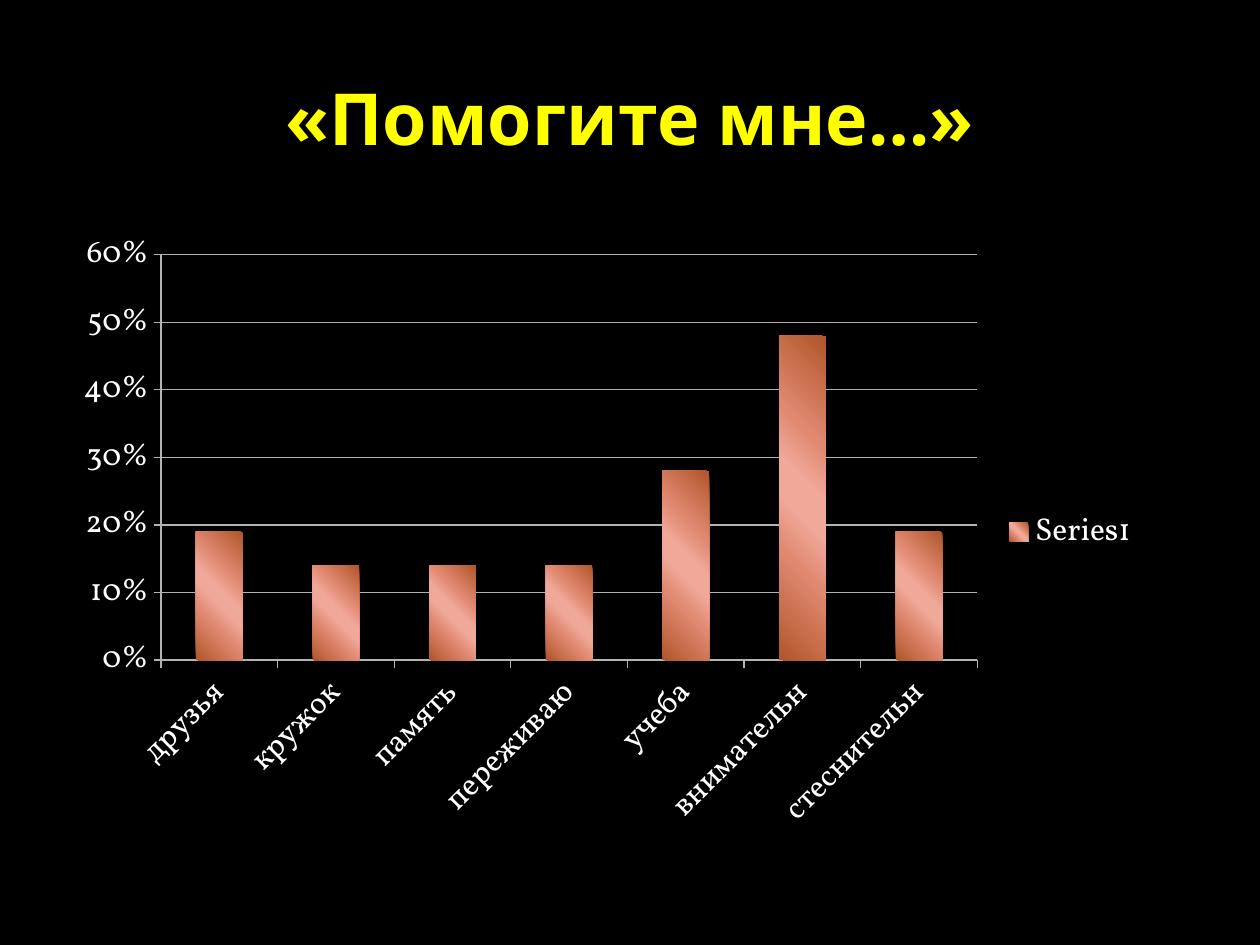
"""Build a slide with a column chart of what pupils ask for help with."""
from lxml.etree import SubElement
from pptx import Presentation
from pptx.chart.data import CategoryChartData
from pptx.dml.color import RGBColor
from pptx.enum.chart import XL_CHART_TYPE, XL_LEGEND_POSITION, XL_TICK_MARK
from pptx.enum.text import MSO_ANCHOR, PP_ALIGN
from pptx.oxml import parse_xml
from pptx.oxml.ns import nsdecls, qn
from pptx.util import Inches, Pt

BLACK = RGBColor(0x00, 0x00, 0x00)
WHITE = RGBColor(0xFF, 0xFF, 0xFF)
YELLOW = RGBColor(0xFF, 0xFF, 0x00)
GRAY = RGBColor(0xB3, 0xB3, 0xB3)
RUST = RGBColor(0xB0, 0x56, 0x2A)
CORAL = RGBColor(0xE0, 0x88, 0x70)
PINK = RGBColor(0xF0, 0xA8, 0x98)

HELP_REQUESTS = {
    "друзья": 0.19,
    "кружок": 0.14,
    "память": 0.14,
    "переживаю": 0.14,
    "учеба": 0.28,
    "внимательн": 0.48,
    "стеснительн": 0.19,
}
GRADIENT_STOPS = [(0, RUST), (30, CORAL), (45, PINK), (55, PINK), (70, CORAL), (100, RUST)]
PLOT_LAYOUT = {"x": 0.09, "y": 0.055, "w": 0.75, "h": 0.65}


def add_text(page, text, left, top, width, height, *, font, size, color, bold=False):
    box = page.shapes.add_textbox(Inches(left), Inches(top), Inches(width), Inches(height))
    frame = box.text_frame
    frame.word_wrap = True
    frame.vertical_anchor = MSO_ANCHOR.MIDDLE
    para = frame.paragraphs[0]
    para.alignment = PP_ALIGN.CENTER
    span = para.add_run()
    span.text = text
    span.font.name = font
    span.font.size = Pt(size)
    span.font.bold = bold
    span.font.color.rgb = color


deck = Presentation()
deck.slide_width = Inches(10)
deck.slide_height = Inches(7.5)
page = deck.slides.add_slide(deck.slide_layouts[6])
page.background.fill.solid()
page.background.fill.fore_color.rgb = BLACK

add_text(page, "«Помогите мне…»", 0.5, 0.3, 9, 1.25,
         font="Open Sans", size=41, color=YELLOW, bold=True)

data = CategoryChartData(number_format="0%")
data.categories = HELP_REQUESTS.keys()
data.add_series("Series1", HELP_REQUESTS.values())
chart = page.shapes.add_chart(
    XL_CHART_TYPE.COLUMN_CLUSTERED,
    Inches(0.5), Inches(1.75), Inches(8.64), Inches(4.95), data,
).chart
chart.has_title = False
chart.font.name = "Vollkorn"
chart.font.size = Pt(18)
chart.font.color.rgb = WHITE
chart.has_legend = True
chart.legend.position = XL_LEGEND_POSITION.RIGHT
chart.legend.include_in_layout = False

for axis in (chart.category_axis, chart.value_axis):
    axis.major_tick_mark = XL_TICK_MARK.OUTSIDE
    axis.minor_tick_mark = XL_TICK_MARK.NONE
    axis.format.line.color.rgb = GRAY
    axis.format.line.width = Pt(0.75)

chart.category_axis.tick_labels.font.size = Pt(18)
label_body = chart.category_axis._element.find(qn("c:txPr")).find(qn("a:bodyPr"))
label_body.set("rot", str(-45 * 60000))

scale = chart.value_axis
scale.minimum_scale = 0
scale.maximum_scale = 0.6
scale.major_unit = 0.1
scale.tick_labels.number_format = "0%"
scale.tick_labels.number_format_is_linked = False
scale.has_major_gridlines = True
scale.major_gridlines.format.line.color.rgb = GRAY
scale.major_gridlines.format.line.width = Pt(0.75)

plot = chart.plots[0]
plot.gap_width = 150
plot.vary_by_categories = False
columns = plot.series[0]
columns.format.line.fill.background()
stops = "".join(
    f'<a:gs pos="{share * 1000}"><a:srgbClr val="{color}"/></a:gs>'
    for share, color in GRADIENT_STOPS
)
gradient = parse_xml(
    f'<a:gradFill {nsdecls("a")} rotWithShape="1"><a:gsLst>{stops}</a:gsLst>'
    f'<a:lin ang="{315 * 60000}" scaled="0"/></a:gradFill>'
)
columns._element.find(qn("c:spPr")).insert(0, gradient)

plot_area = chart._chartSpace.chart.plotArea
layout = plot_area.find(qn("c:layout"))
if layout is None:
    layout = parse_xml(f'<c:layout {nsdecls("c")}/>')
    plot_area.insert(0, layout)
manual = SubElement(layout, qn("c:manualLayout"))
SubElement(manual, qn("c:layoutTarget")).set("val", "inner")
for side in "xy":
    SubElement(manual, qn(f"c:{side}Mode")).set("val", "edge")
for side, share in PLOT_LAYOUT.items():
    SubElement(manual, qn(f"c:{side}")).set("val", str(share))

deck.save("out.pptx")
